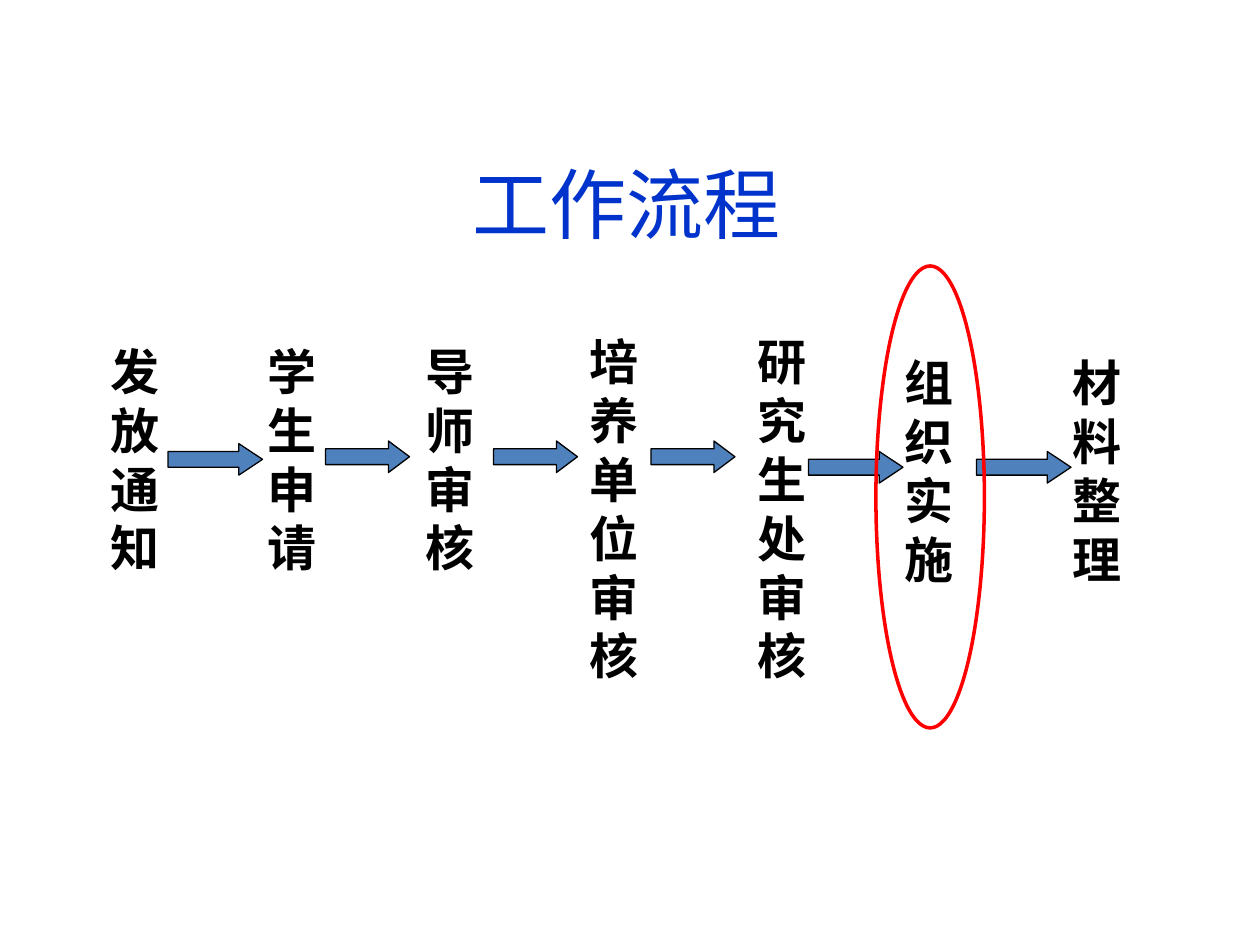
from pptx import Presentation
from pptx.dml.color import RGBColor
from pptx.enum import shapes, text
from pptx.util import Pt

TITLE_BLUE = RGBColor(0x00, 0x33, 0xCC)
ARROW_BLUE = RGBColor(0x4F, 0x81, 0xBD)
BLACK = RGBColor(0x00, 0x00, 0x00)
RED = RGBColor(0xFF, 0x00, 0x00)

TITLE_FONT = {"name": "Calibri", "size": Pt(44)}
STEP_FONT = {"name": "Calibri", "size": Pt(28), "bold": True}

# Wording, left, top, width, height
STEPS = [
    ("发放通知", 56, 191.5, 42, 142),
    ("学生申请", 146, 191.5, 42, 142),
    ("导师审核", 236, 191.5, 42, 142),
    ("培养单位审核", 330, 186, 48, 209),
    ("研究生处审核", 426, 186, 42, 209),
    ("组织实施", 510, 198, 42, 142),
    ("材料整理", 606, 198, 42, 142),
]
# Left, top, width
ARROWS = [
    (96, 253.5, 54),
    (186, 252, 48),
    (282, 252, 48),
    (372, 252, 48),
    (462, 258, 54),
    (558, 258, 54),
]
ARROW_HEIGHT = 18


def format_font(font, values, color):
    for name, value in values.items():
        setattr(font, name, value)
    font.color.rgb = color


def set_title(slide, wording):
    title = slide.shapes.title
    place = {"left": 34, "top": 62, "width": 648, "height": 108}
    for name, value in place.items():
        setattr(title, name, Pt(value))
    title.text_frame.text = wording
    title.text_frame.vertical_anchor = text.MSO_ANCHOR.MIDDLE
    paragraph = title.text_frame.paragraphs[0]
    paragraph.alignment = text.PP_ALIGN.CENTER
    format_font(paragraph.runs[0].font, TITLE_FONT, TITLE_BLUE)


def add_step(slide, wording, *place):
    """Add a box so narrow that its text wraps to one character a line."""
    box = slide.shapes.add_textbox(*map(Pt, place))
    frame = box.text_frame
    frame.word_wrap = True
    frame.auto_size = text.MSO_AUTO_SIZE.SHAPE_TO_FIT_TEXT
    frame.text = wording
    format_font(frame.paragraphs[0].runs[0].font, STEP_FONT, BLACK)


def add_outlined_shape(slide, kind, place, color, line_width):
    shape = slide.shapes.add_shape(kind, *map(Pt, place))
    shape.shadow.inherit = False
    shape.line.color.rgb = color
    shape.line.width = Pt(line_width)
    return shape


def add_arrow(slide, left, top, width):
    """Add a block arrow whose head takes a quarter of its length."""
    arrow = add_outlined_shape(slide, shapes.MSO_SHAPE.RIGHT_ARROW,
                               (left, top, width, ARROW_HEIGHT), BLACK, 0.75)
    arrow.adjustments[1] = width / 4 / ARROW_HEIGHT
    arrow.fill.solid()
    arrow.fill.fore_color.rgb = ARROW_BLUE


def add_highlight(slide, *place):
    ellipse = add_outlined_shape(slide, shapes.MSO_SHAPE.OVAL, place, RED, 2)
    ellipse.fill.background()


def main():
    presentation = Presentation()
    presentation.slide_width = Pt(720)
    presentation.slide_height = Pt(540)
    slide = presentation.slides.add_slide(presentation.slide_layouts[5])
    set_title(slide, "工作流程")
    for step in STEPS:
        add_step(slide, *step)
    for arrow in ARROWS:
        add_arrow(slide, *arrow)
    add_highlight(slide, 500.5, 152, 62, 264)
    presentation.save("out.pptx")


if __name__ == "__main__":
    main()
